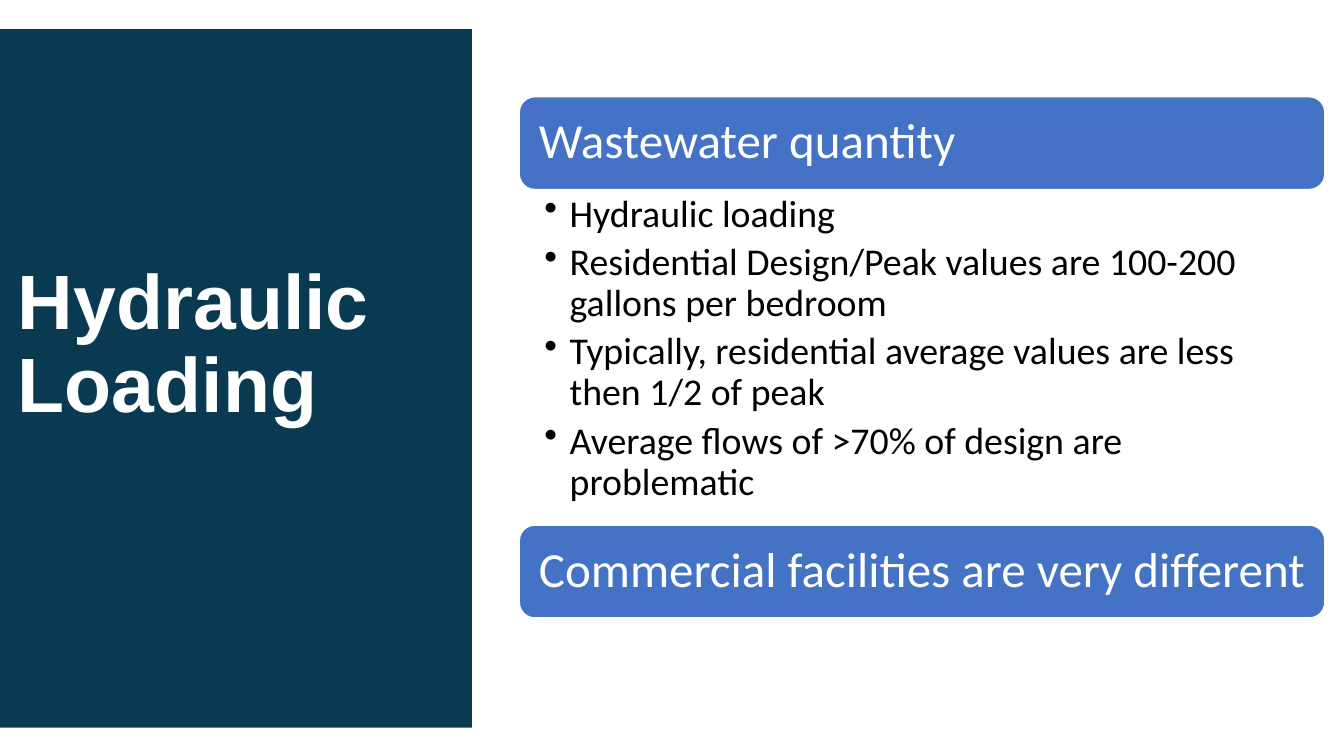
from lxml import etree
from pptx import Presentation
from pptx.dml.color import RGBColor
from pptx.enum.shapes import MSO_SHAPE
from pptx.enum.text import MSO_ANCHOR, PP_ALIGN
from pptx.oxml.ns import qn
from pptx.util import Inches, Pt

RECTANGLE = MSO_SHAPE.RECTANGLE
ROUNDED = MSO_SHAPE.ROUNDED_RECTANGLE
MIDDLE, TOP = MSO_ANCHOR.MIDDLE, MSO_ANCHOR.TOP
LEFT = PP_ALIGN.LEFT

TITLE = "Hydraulic Loading"
SECTIONS = [
    ("Wastewater quantity", [
        "Hydraulic loading",
        "Residential Design/Peak values are 100-200 gallons per bedroom",
        "Typically, residential average values are less then 1/2 of peak",
        "Average flows of >70% of design are problematic",
    ]),
    ("Commercial facilities are very different", []),
]

NAVY, BLUE, WHITE, BLACK = "0A3A51", "4472C4", "FFFFFF", "000000"
LIST_LEFT, LIST_TOP, LIST_WIDTH = 5.15, 0.96, 7.99
BAR_HEIGHT, BULLETS_HEIGHT = 0.92, 3.33
BULLET_INDENT = 0.25


def color(value):
    return RGBColor.from_string(value)


def add_block(slide, kind, box, fill, line=None):
    shape = slide.shapes.add_shape(kind, *map(Inches, box))
    shape.shadow.inherit = False
    shape.fill.solid()
    shape.fill.fore_color.rgb = color(fill)
    if line:
        shape.line.color.rgb = color(line)
        shape.line.width = Pt(1)
    else:
        shape.line.fill.background()
    return shape


def set_bullet(paragraph):
    properties = paragraph._p.get_or_add_pPr()
    properties.set("marL", str(Inches(BULLET_INDENT)))
    properties.set("indent", str(-Inches(BULLET_INDENT)))
    etree.SubElement(properties, qn("a:buChar")).set("char", "•")


def write(shape, lines, font, size, ink, insets, anchor=MIDDLE,
          bold=False, bullets=False, space_after=0):
    """Fill a shape with paragraphs; insets are left, top, right, bottom."""
    frame = shape.text_frame
    frame.word_wrap = True
    frame.vertical_anchor = anchor
    (frame.margin_left, frame.margin_top,
     frame.margin_right, frame.margin_bottom) = map(Inches, insets)
    for index, line in enumerate(lines):
        paragraph = frame.add_paragraph() if index else frame.paragraphs[0]
        paragraph.alignment = LEFT
        paragraph.line_spacing = 0.9
        paragraph.space_after = Pt(space_after)
        if bullets:
            set_bullet(paragraph)
        run = paragraph.add_run()
        run.text = line
        run.font.name = font
        run.font.size = Pt(size)
        run.font.bold = bold
        run.font.color.rgb = color(ink)


def add_sections(slide):
    top = LIST_TOP
    for heading, points in SECTIONS:
        bar = add_block(slide, ROUNDED, (LIST_LEFT, top, LIST_WIDTH, BAR_HEIGHT),
                        BLUE, WHITE)
        write(bar, [heading], "Calibri", 35, WHITE, (0.15, 0.1, 0.1, 0.1))
        top += BAR_HEIGHT
        if points:
            box = (LIST_LEFT, top, LIST_WIDTH, BULLETS_HEIGHT)
            body = slide.shapes.add_textbox(*map(Inches, box))
            write(body, points, "Calibri", 27, BLACK, (0.25, 0.05, 0.27, 0.05),
                  anchor=TOP, bullets=True, space_after=5.4)
            top += BULLETS_HEIGHT


def main():
    presentation = Presentation()
    presentation.slide_width = Inches(13.33)
    presentation.slide_height = Inches(7.5)
    slide = presentation.slides.add_slide(presentation.slide_layouts[6])

    add_block(slide, RECTANGLE, (0, 0.29, 4.68, 6.93), NAVY)
    title = slide.shapes.add_textbox(*map(Inches, (0.08, 1.58, 4.81, 3.71)))
    write(title, [TITLE], "Arial", 55, WHITE, (0.1, 0.05, 0.1, 0.05), bold=True)
    add_sections(slide)

    presentation.save("out.pptx")


if __name__ == "__main__":
    main()
